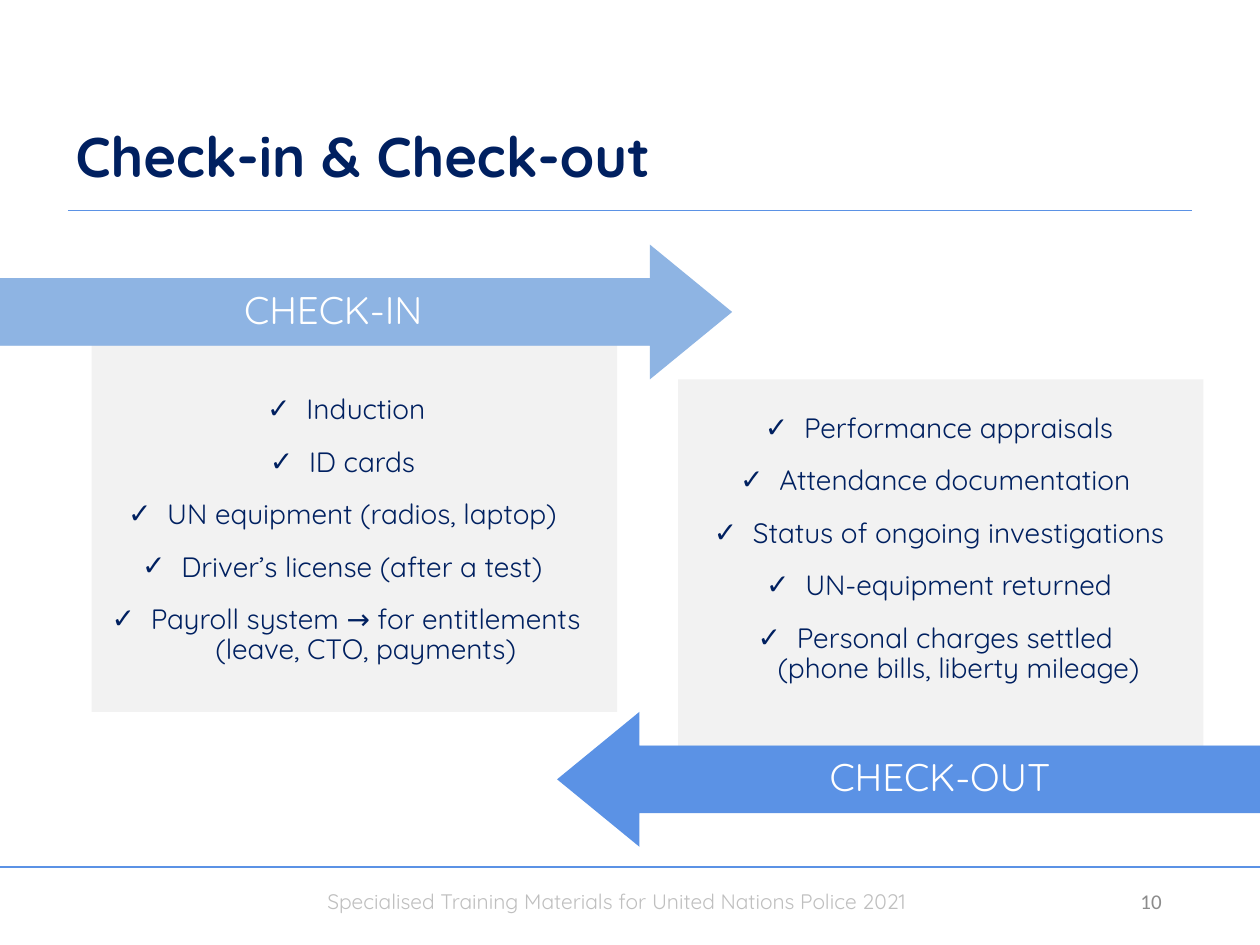
from lxml.etree import SubElement
from pptx import Presentation
from pptx.dml.color import RGBColor
from pptx.enum.shapes import MSO_CONNECTOR as LINE, MSO_SHAPE as SHAPE
from pptx.enum.text import MSO_ANCHOR as ANCHOR, MSO_AUTO_SIZE as FIT, PP_ALIGN as ALIGN
from pptx.oxml.ns import qn
from pptx.util import Cm, Pt

NAVY = RGBColor(0x00, 0x20, 0x60)
BLUE = RGBColor(0x5B, 0x92, 0xE5)
LIGHT_BLUE = RGBColor(0x8E, 0xB4, 0xE3)
PANEL_GRAY = RGBColor(0xF2, 0xF2, 0xF2)
FOOTER_GRAY = RGBColor(0xBF, 0xBF, 0xBF)
NUMBER_GRAY = RGBColor(0x8C, 0x8C, 0x8C)
WHITE = RGBColor(0xFF, 0xFF, 0xFF)
FONT = "Quicksand"

TITLE = "Check-in & Check-out"
FOOTER = "Specialised Training Materials for United Nations Police 2021"
NUMBER = "10"
RULES = [(0, 25.4, 17.48), (1.37, 24.03, 4.24)]
PANEL_SIZE = (10.59, 7.39)
ARROW_HEIGHT, BAND_HEIGHT = 2.72, 1.35

STAGES = [
    {
        "label": "CHECK-IN", "color": LIGHT_BLUE, "rotation": 0,
        "panel": (1.85, 6.96), "arrow": (-0.05, 4.93, 14.81),
        "band": (-0.05, 13.54), "list": (1.85, 7.65, 10.26, 6.1),
        "items": [
            ["Induction"],
            ["ID cards "],
            ["UN equipment (radios, laptop) "],
            ["Driver’s license (after a test) "],
            ["Payroll system → for entitlements (leave, CTO, payments)"],
        ],
    },
    {
        "label": "CHECK-OUT", "color": BLUE, "rotation": 180,
        "panel": (13.67, 7.65), "arrow": (11.23, 14.35, 14.22),
        "band": (12.45, 13), "list": (13.94, 8.51, 9.98, 5.13),
        "items": [
            ["Performance appraisals"],
            ["Attendance documentation "],
            ["Status of ongoing investigations"],
            ["UN-equipment returned"],
            ["Personal charges settled ", "(phone bills, liberty mileage)"],
        ],
    },
]


def place(box, left, top, width, height):
    box.left, box.top, box.width, box.height = map(Cm, (left, top, width, height))


def set_frame(box, anchor, inset=None):
    frame = box.text_frame
    frame.word_wrap = True
    frame.auto_size = FIT.NONE
    frame.vertical_anchor = anchor
    if inset is not None:
        frame.margin_left = frame.margin_right = Cm(inset)
        frame.margin_top = frame.margin_bottom = Cm(inset)
    return frame


def write(para, words, size, color, align, font=FONT, bold=False):
    para.alignment = align
    span = para.add_run()
    span.text = words
    span.font.name = font
    span.font.size = Pt(size)
    span.font.bold = bold
    span.font.color.rgb = color


def add_filled(page, kind, color, *area):
    shape = page.shapes.add_shape(kind, *map(Cm, area))
    shape.shadow.inherit = False
    shape.fill.solid()
    shape.fill.fore_color.rgb = color
    shape.line.fill.background()
    return shape


def add_rule(page, start, end, top):
    rule = page.shapes.add_connector(LINE.STRAIGHT, Cm(start), Cm(top), Cm(end), Cm(top))
    rule.line.color.rgb = BLUE
    rule.line.width = Pt(0.75)
    SubElement(rule.element.spPr, qn("a:effectLst"))


def add_caption(page, words, color, align, anchor, font, *area):
    box = page.shapes.add_textbox(*map(Cm, area))
    write(set_frame(box, anchor).paragraphs[0], words, 12, color, align, font)


def fill_list(body, stage):
    place(body, *stage["list"])
    frame = set_frame(body, ANCHOR.MIDDLE, 0.18)
    for index, lines in enumerate(stage["items"]):
        para = frame.add_paragraph() if index else frame.paragraphs[0]
        properties = para._p.get_or_add_pPr()
        properties.set("marL", str(Cm(0.79)))
        properties.set("indent", str(-Cm(0.79)))
        SubElement(properties, qn("a:buChar"), char="✓")
        para.line_spacing = 0.9
        para.space_before = Pt(0)
        para.space_after = Pt(12.7)
        for number, words in enumerate(lines):
            if number:
                para.add_line_break()
            write(para, words, 16, NAVY, ALIGN.CENTER)


def add_stage(page, stage, body):
    add_filled(page, SHAPE.RECTANGLE, PANEL_GRAY, *stage["panel"], *PANEL_SIZE)
    left, top, width = stage["arrow"]
    arrow = add_filled(page, SHAPE.RIGHT_ARROW, stage["color"], left, top, width, ARROW_HEIGHT)
    arrow.adjustments[0], arrow.adjustments[1] = 0.5, 0.61
    arrow.rotation = stage["rotation"]
    band_left, band_width = stage["band"]
    band_top = top + (ARROW_HEIGHT - BAND_HEIGHT) / 2
    band = add_filled(page, SHAPE.RECTANGLE, stage["color"],
                      band_left, band_top, band_width, BAND_HEIGHT)
    para = set_frame(band, ANCHOR.MIDDLE, 0.23).paragraphs[0]
    para.line_spacing = 0.9
    write(para, stage["label"], 22, WHITE, ALIGN.CENTER)
    fill_list(body, stage)
    body.element.getparent().append(body.element)


def main():
    deck = Presentation()
    deck.slide_width, deck.slide_height = Cm(25.4), Cm(19.05)
    page = deck.slides.add_slide(deck.slide_layouts[3])
    title, *bodies = page.placeholders

    for rule in RULES:
        add_rule(page, *rule)
    add_caption(page, FOOTER, FOOTER_GRAY, ALIGN.LEFT, ANCHOR.TOP, FONT,
                6.35, 17.78, 12.7, 0.76)
    add_caption(page, NUMBER, NUMBER_GRAY, ALIGN.RIGHT, ANCHOR.MIDDLE, "Calibri",
                21.84, 17.65, 1.83, 1.02)

    place(title, 1.27, 1.27, 19.89, 2.67)
    para = set_frame(title, ANCHOR.BOTTOM).paragraphs[0]
    para.line_spacing = Pt(34.4)
    write(para, TITLE, 32, NAVY, ALIGN.LEFT, bold=True)

    for stage, body in zip(STAGES, bodies):
        add_stage(page, stage, body)
    deck.save("out.pptx")


if __name__ == "__main__":
    main()
